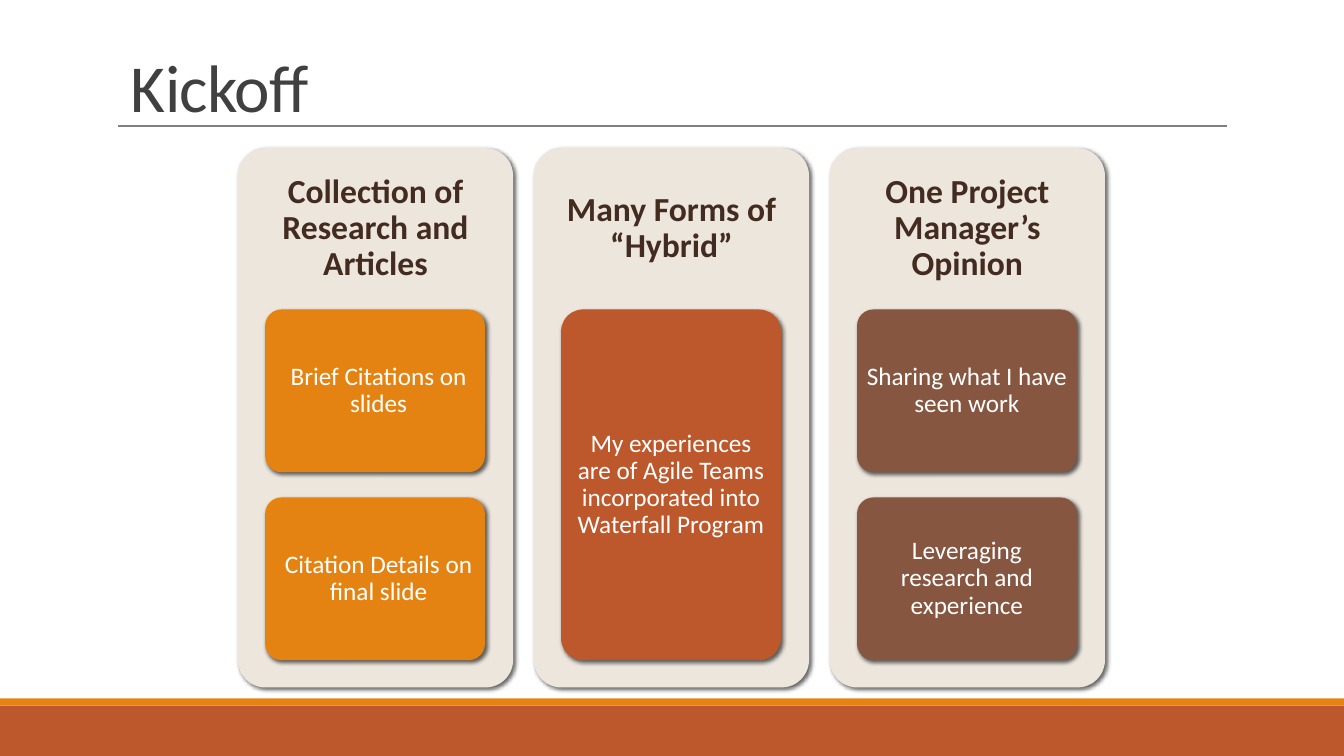
from pptx import Presentation
from pptx.dml.color import RGBColor
from pptx.enum.shapes import MSO_CONNECTOR, MSO_SHAPE
from pptx.enum.text import MSO_ANCHOR, PP_ALIGN
from pptx.oxml import parse_xml
from pptx.oxml.ns import nsdecls
from pptx.util import Inches, Pt

RECT, ROUND = MSO_SHAPE.RECTANGLE, MSO_SHAPE.ROUNDED_RECTANGLE
STRAIGHT = MSO_CONNECTOR.STRAIGHT
MIDDLE = MSO_ANCHOR.MIDDLE
LEFT, CENTER = PP_ALIGN.LEFT, PP_ALIGN.CENTER

THEME = {
    "font": "Calibri",
    "title": 48, "heading": 24, "body": 18,
    "ink": "404040", "heading_ink": "432B20", "white": "FFFFFF",
    "rule": "808080", "panel": "ECE6DD",
    "orange": "E48312", "rust": "BD582C", "brown": "865640",
}
SHADOW = (
    f'<a:effectLst {nsdecls("a")}><a:outerShdw blurRad="{Pt(3)}" dist="{Pt(2)}" '
    'dir="2700000" algn="tl" rotWithShape="0"><a:srgbClr val="000000">'
    '<a:alpha val="60000"/></a:srgbClr></a:outerShdw></a:effectLst>'
)
WIDTH, HEIGHT = 13.33, 7.5
PANEL_LEFT, PANEL_TOP, PANEL_W, PANEL_H = 2.36, 1.47, 2.73, 5.35
PANEL_STEP, HEADING_H = 2.935, 1.6
CARD_INSET, CARD_TOP, CARD_W, CARD_AREA, CARD_GAP = 0.27, 3.07, 2.18, 3.48, 0.25

COLUMNS = [
    ("Collection of Research and Articles", "orange", 0.07,
     ["Brief Citations on slides", "Citation Details on final slide"]),
    ("Many Forms of “Hybrid”", "rust", 0,
     ["My experiences are of Agile Teams incorporated into Waterfall Program"]),
    ("One Project Manager’s Opinion", "brown", 0,
     ["Sharing what I have seen work", "Leveraging research and experience"]),
]

prs = Presentation()
prs.slide_width, prs.slide_height = Inches(WIDTH), Inches(HEIGHT)
s = prs.slides.add_slide(prs.slide_layouts[6])


def add_block(kind, x, y, w, h, color):
    sp = s.shapes.add_shape(kind, Inches(x), Inches(y), Inches(w), Inches(h))
    sp.fill.solid()
    sp.fill.fore_color.rgb = RGBColor.from_string(THEME[color])
    sp.line.fill.background()
    sp.shadow.inherit = False
    if kind == ROUND:
        sp.adjustments[0] = 0.1
        props = sp._element.spPr
        props.remove(props.find("{*}effectLst"))
        props.append(parse_xml(SHADOW))
    return sp


def write(sp, text, size, color, align, spacing, inset_x, inset_y):
    tf = sp.text_frame
    tf.text = text
    tf.word_wrap = True
    tf.vertical_anchor = MIDDLE
    tf.margin_left = tf.margin_right = Inches(inset_x)
    tf.margin_top = tf.margin_bottom = Inches(inset_y)
    p = tf.paragraphs[0]
    p.alignment, p.line_spacing = align, spacing
    r = p.runs[0]
    r.font.name, r.font.size = THEME["font"], Pt(THEME[size])
    r.font.color.rgb = RGBColor.from_string(THEME[color])
    return p


add_block(RECT, 0, 7, WIDTH, 0.5, "rust")
add_block(RECT, 0, 6.93, WIDTH, 0.07, "orange")

rule = s.shapes.add_connector(
    STRAIGHT, Inches(1.17), Inches(1.25), Inches(12.17), Inches(1.25))
rule.line.color.rgb = RGBColor.from_string(THEME["rule"])
rule.line.width = Pt(1.5)
rule._element.spPr.append(parse_xml(f'<a:effectLst {nsdecls("a")}/>'))

title = s.shapes.add_textbox(Inches(1.2), Inches(0.47), Inches(11), Inches(0.88))
p = write(title, "Kickoff", "title", "ink", LEFT, 0.85, 0.1, 0.05)
p.runs[0].font._element.set("spc", "-50")

for col, (heading, color, indent, cards) in enumerate(COLUMNS):
    x = PANEL_LEFT + col * PANEL_STEP
    add_block(ROUND, x, PANEL_TOP, PANEL_W, PANEL_H, "panel")
    tb = s.shapes.add_textbox(
        Inches(x), Inches(PANEL_TOP), Inches(PANEL_W), Inches(HEADING_H))
    p = write(tb, heading, "heading", "heading_ink", CENTER, 0.9, 0.1, 0.1)
    p.runs[0].font.bold = True

    card_h = (CARD_AREA - CARD_GAP * (len(cards) - 1)) / len(cards)
    for row, text in enumerate(cards):
        y = CARD_TOP + row * (card_h + CARD_GAP)
        card = add_block(ROUND, x + CARD_INSET, y, CARD_W, card_h, color)
        p = write(card, text, "body", "white", CENTER, 0.9, 0.05, 0.04)
        p._p.get_or_add_pPr().set("marL", str(Inches(indent)))

prs.save("out.pptx")
